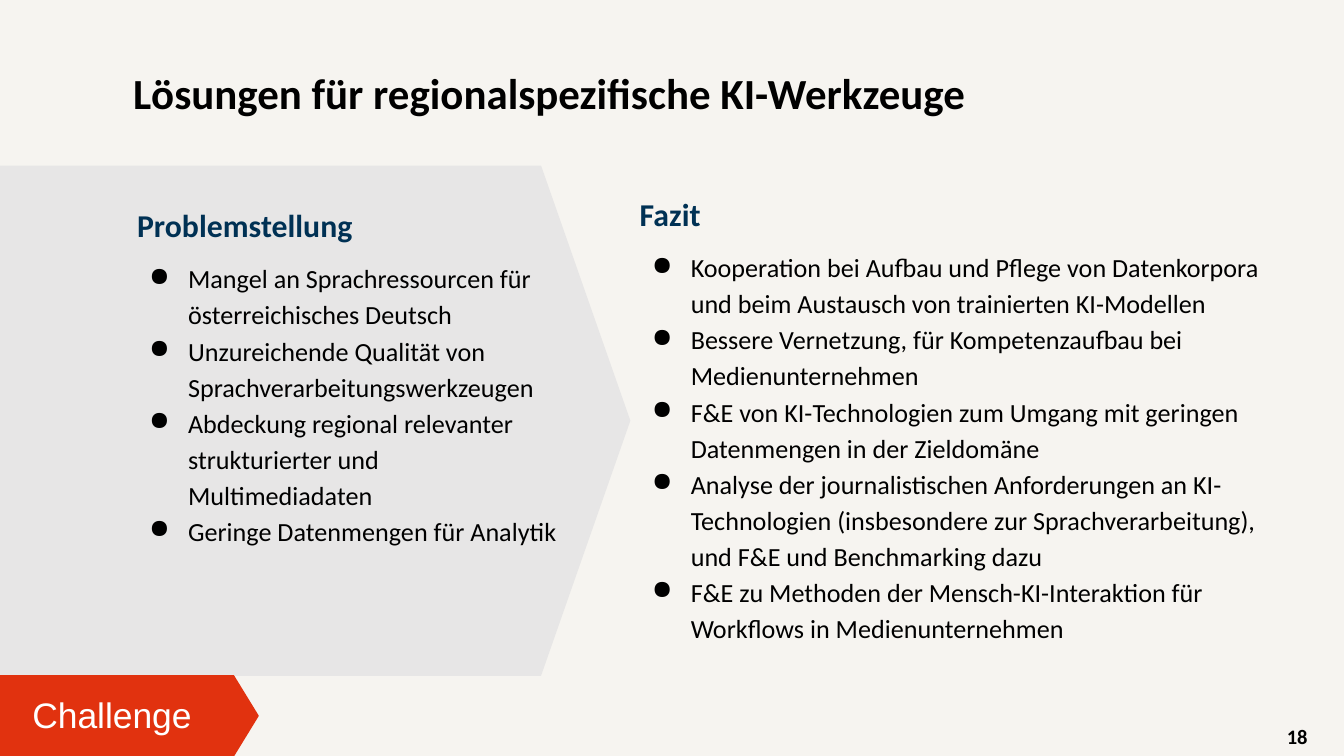
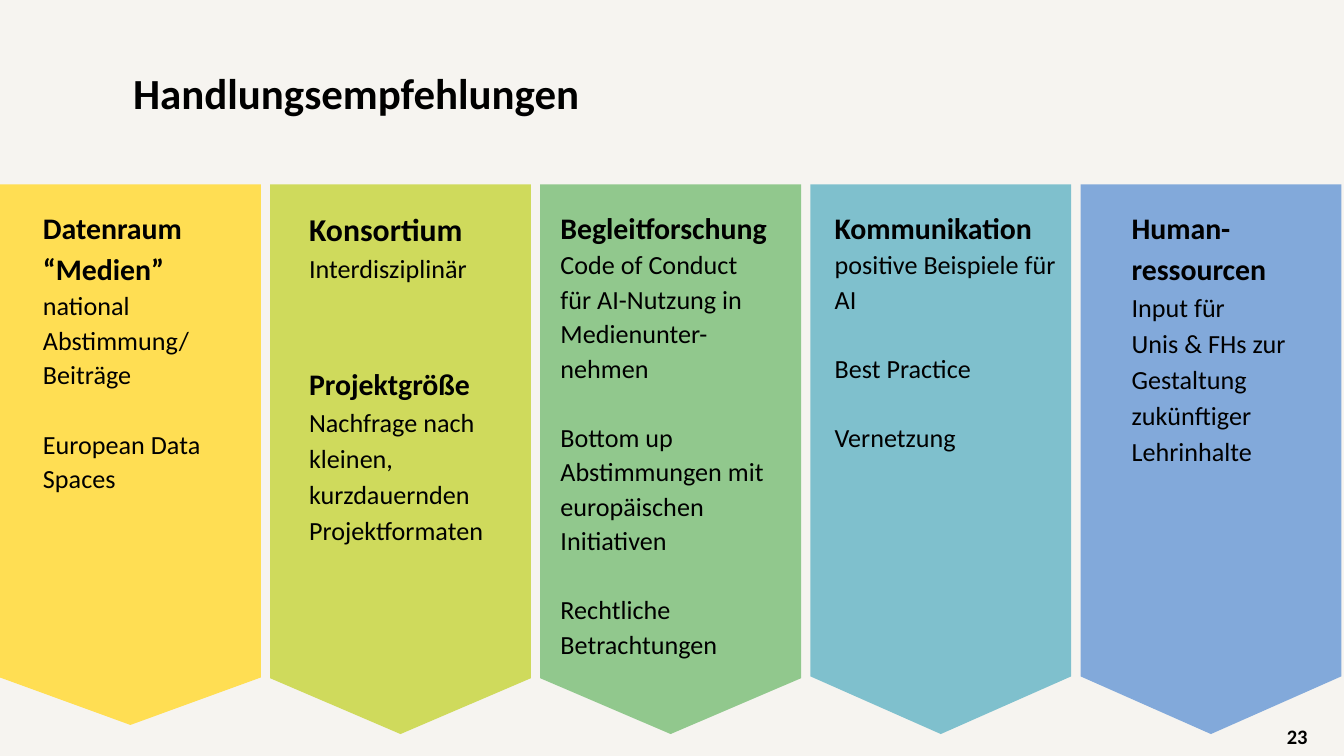
from lxml.etree import SubElement as Sub
from pptx import Presentation
from pptx.dml.color import RGBColor as RGB
from pptx.enum.shapes import MSO_SHAPE as Kind
from pptx.enum.text import MSO_ANCHOR as Anchor, MSO_AUTO_SIZE as Fit, PP_ALIGN as Align
from pptx.oxml.ns import qn
from pptx.util import Inches, Pt

deck = Presentation()
deck.slide_width, deck.slide_height = Inches(10), Inches(5.625)
WIDE, HIGH = deck.slide_width / 100, deck.slide_height / 100  # one percent

tint = RGB.from_string
BLACK, NAVY, WHITE = "000000", "003154", "FFFFFF"
GREY, RED, CREAM = "E7E6E6", "E1320F", "F6F4F0"

# Text styles: size, bold, colour, line spacing, bullet
STYLE = {
    "title": (23, True, BLACK, 0.9, False),
    "page": (11, True, BLACK, None, False),
    "part": (17, True, NAVY, 1.15, False),
    "item": (14, False, BLACK, 1.15, True),
    "big": (17, True, BLACK, 1.15, False),
    "head": (16, True, BLACK, 1.15, False),
    "text": (14, False, BLACK, 1.1, False),
    "loose": (14, False, BLACK, 1.15, False),
    "tag": (19, False, WHITE, None, False),
}


def write(box, area, lines, pad=0.07, right=0.07, face="Calibri"):
    """Place a box by percent of the slide and fill it with (style, space before, text)."""
    left, top, width, height = area
    box.left, box.width = int(left * WIDE), int(width * WIDE)
    box.top, box.height = int(top * HIGH), int(height * HIGH)
    frame = box.text_frame
    frame.word_wrap, frame.auto_size = True, Fit.NONE
    frame.margin_left, frame.margin_right = Inches(0.07), Inches(right)
    frame.margin_top = frame.margin_bottom = Inches(pad)
    for i, (style, gap, words) in enumerate(lines):
        para = frame.paragraphs[0] if i == 0 else frame.add_paragraph()
        para.text = words
        size, bold, shade, pitch, dot = STYLE[style]
        para.font.name, para.font.size, para.font.bold = face, Pt(size), bold
        para.font.color.rgb = tint(shade)
        para.alignment = Align.LEFT
        para.space_before = Pt(gap)
        if pitch:
            para.line_spacing = pitch
        if dot:
            props = para._p.get_or_add_pPr()
            props.set("marL", str(Inches(0.38)))
            props.set("indent", str(Inches(-0.29)))
            Sub(Sub(props, qn("a:buClr")), qn("a:srgbClr"), val=BLACK)
            Sub(props, qn("a:buChar"), char="●")
    return frame


def plate(slide, area, shade, tip, turn=0):
    """Draw a pointed plate; a turn of 90 makes it point down inside the area."""
    left, top, width, height = area
    left, width, top, height = left * WIDE, width * WIDE, top * HIGH, height * HIGH
    if turn:
        left, top = left + (width - height) / 2, top + (height - width) / 2
        width, height = height, width
    shape = slide.shapes.add_shape(Kind.PENTAGON, int(left), int(top), int(width), int(height))
    shape.rotation, shape.adjustments[0] = turn, tip
    shape.shadow.inherit = False
    shape.fill.solid()
    shape.fill.fore_color.rgb = tint(shade)
    shape.line.fill.background()
    return shape


# Shared background, titles and page numbers
back = deck.slide_master.background.fill
back.solid()
back.fore_color.rgb = tint(CREAM)
pages = []
for title, page in (("Lösungen für regionalspezifische KI-Werkzeuge", "18"),
                    ("Handlungsempfehlungen", "23")):
    slide = deck.slides.add_slide(deck.slide_layouts[5])
    frame = write(slide.shapes.title, (9.2, 7.3, 86.2, 10.7), [("title", 0, title)], 0.04)
    frame.vertical_anchor = Anchor.MIDDLE
    frame = write(slide.shapes.add_textbox(0, 0, 0, 0), (75.5, 94.8, 22.5, 5.3),
                  [("page", 0, page)], 0.04)
    frame.vertical_anchor = Anchor.MIDDLE
    frame.paragraphs[0].alignment = Align.RIGHT
    pages.append(slide)
first, second = pages

# Problem and conclusion
plate(first, (0, 21.9, 46.9, 67.5), GREY, 0.175)
parts = [
    ((46.9, 23.8, 50.4, 65.6), 0.07, 0.07, "Fazit", [
        "Kooperation bei Aufbau und Pflege von Datenkorpora und beim Austausch von trainierten KI-Modellen",
        "Bessere Vernetzung, für Kompetenzaufbau bei Medienunternehmen",
        "F&E von KI-Technologien zum Umgang mit geringen Datenmengen in der Zieldomäne",
        "Analyse der journalistischen Anforderungen an KI-Technologien (insbesondere zur "
        "Sprachverarbeitung), und F&E und Benchmarking dazu",
        "F&E zu Methoden der Mensch-KI-Interaktion für Workflows in Medienunternehmen"]),
    ((9.5, 25.8, 41, 67.5), 0.04, 0.89, "Problemstellung", [
        "Mangel an Sprachressourcen für österreichisches Deutsch",
        "Unzureichende Qualität von Sprachverarbeitungswerkzeugen",
        "Abdeckung regional relevanter strukturierter und Multimediadaten",
        "Geringe Datenmengen für Analytik"]),
]
for area, pad, right, head, items in parts:
    lines = [("part", 7.5, head)]
    lines += [("item", 0 if i else 7.5, item) for i, item in enumerate(items)]
    write(first.shapes.add_textbox(0, 0, 0, 0), area, lines, pad, right)

# Challenge tag
tag = plate(first, (0, 89.4, 19.2, 10.6), RED, 0.306)
tag.line.color.rgb, tag.line.width = tint(RED), Pt(0.75)
write(first.shapes.add_textbox(0, 0, 0, 0), (1.7, 90.5, 14.5, 8.4),
      [("tag", 0, "Challenge")], face="Arial")

# Five recommendations: colour, plate height, tip, text left, text width, text height, lines
STEP, SKIP = 20.1, 18.5  # column pitch in percent, gap of one text line in points
columns = [
    ("FFDE53", 71.5, 0.182, 2.5, 14.3, 47.3, [
        ("head", 7.5, "Datenraum “Medien”"), ("text", 0, "national"),
        ("text", 0, "Abstimmung/"), ("text", 0, "Beiträge"),
        ("text", SKIP, "European Data Spaces")]),
    ("CFDA5C", 72.7, 0.214, 22.3, 16.3, 57.8, [
        ("big", 7.5, "Konsortium"), ("loose", 0, "Interdisziplinär"),
        ("head", 41, "Projektgröße"),
        ("loose", 0, "Nachfrage nach kleinen, kurzdauernden Projektformaten")]),
    ("91C88D", 72.7, 0.214, 41, 18.5, 68.8, [
        ("head", 7.5, "Begleitforschung"),
        ("text", 0, "Code of Conduct\nfür AI-Nutzung in Medienunter-nehmen"),
        ("text", SKIP, "Bottom up"),
        ("text", 0, "Abstimmungen mit europäischen Initiativen"),
        ("text", SKIP, "Rechtliche Betrachtungen")]),
    ("7FC0CD", 72.7, 0.221, 61.4, 18.5, 38.2, [
        ("head", 7.5, "Kommunikation"), ("text", 0, "positive Beispiele für AI"),
        ("text", SKIP, "Best Practice"), ("text", SKIP, "Vernetzung")]),
    ("82A9DA", 72.7, 0.221, 83.5, 16.3, 41.8, [
        ("head", 7.5, "Human-"), ("head", 0, "ressourcen"),
        ("loose", 0, "Input für\nUnis & FHs zur Gestaltung zukünftiger Lehrinhalte")]),
]
for i, (shade, tall, tip, left, width, height, lines) in enumerate(columns):
    plate(second, (i * STEP, 24.4, 19.4, tall), shade, tip, 90)
    write(second.shapes.add_textbox(0, 0, 0, 0), (left, 25.8, width, height), lines)

deck.save("out.pptx")
